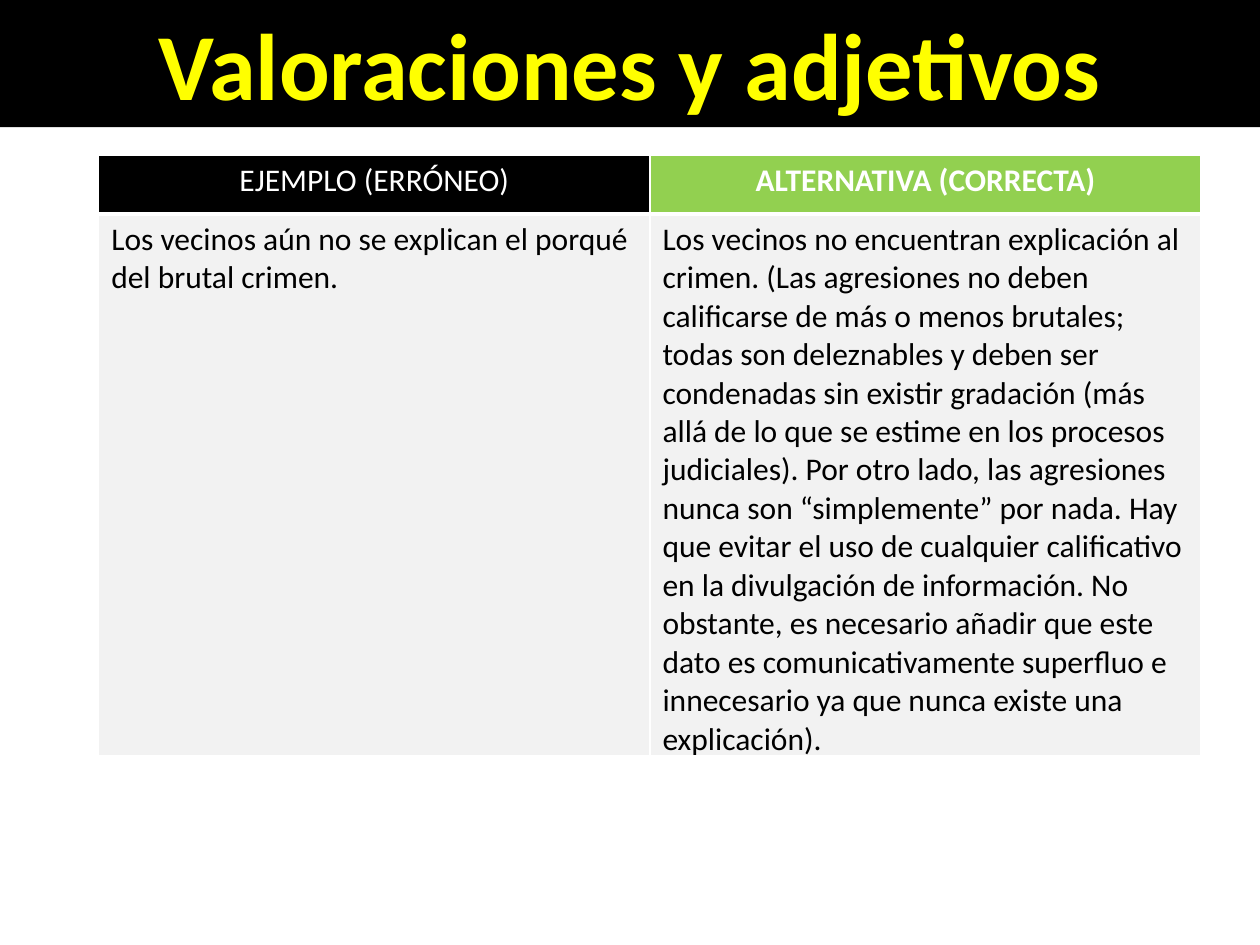
from lxml import etree
from pptx import Presentation
from pptx import util as u
from pptx.dml import color
from pptx.enum import shapes, text
from pptx.oxml import ns

COLORS = {"black": "000000", "white": "FFFFFF", "yellow": "FFFF00",
          "green": "92D050", "gray": "F2F2F2"}


def write_text(frame, wording, alignment, formats):
    paragraph = frame.paragraphs[0]
    paragraph.alignment = alignment
    run = paragraph.add_run()
    run.text = wording
    run.font.color.rgb = color.RGBColor.from_string(COLORS[formats["color"]])
    for name in ("name", "size", "bold"):
        setattr(run.font, name, formats[name])


def set_borders(cell, widths):
    properties = cell._tc.get_or_add_tcPr()
    for position, (side, width) in enumerate(widths.items()):
        line = etree.Element(ns.qn(f"a:ln{side}"), w=str(u.Pt(width)))
        fill = etree.SubElement(line, ns.qn("a:solidFill"))
        etree.SubElement(fill, ns.qn("a:srgbClr"), val=COLORS["white"])
        properties.insert(position, line)


presentation = Presentation()
presentation.slide_width, presentation.slide_height = u.Pt(720), u.Pt(540)
slide = presentation.slides.add_slide(presentation.slide_layouts[6])
center, left = text.PP_ALIGN.CENTER, text.PP_ALIGN.LEFT

# Title bar
bar = slide.shapes.add_shape(
    shapes.MSO_SHAPE.RECTANGLE, u.Pt(0), u.Pt(0), u.Pt(720), u.Pt(72.7))
bar.shadow.inherit = False
bar.fill.solid()
bar.fill.fore_color.rgb = color.RGBColor.from_string(COLORS["black"])
bar.line.fill.background()
bar.text_frame.word_wrap = True
bar.text_frame.auto_size = text.MSO_AUTO_SIZE.SHAPE_TO_FIT_TEXT
bar.text_frame.vertical_anchor = text.MSO_ANCHOR.TOP
write_text(bar.text_frame, "Valoraciones y adjetivos", center,
           {"name": "Calibri", "size": u.Pt(54), "bold": True, "color": "yellow"})

# Table of wrong and right wording: text, fill, font colour, bold
rows = [
    [("EJEMPLO (ERRÓNEO)", "black", "white", False),
     ("ALTERNATIVA (CORRECTA)", "green", "white", True)],
    [("Los vecinos aún no se explican el porqué del brutal crimen.",
      "gray", "black", False),
     ("Los vecinos no encuentran explicación al crimen. (Las agresiones no "
      "deben calificarse de más o menos brutales; todas son deleznables y "
      "deben ser condenadas sin existir gradación (más allá de lo que se "
      "estime en los procesos judiciales). Por otro lado, las agresiones "
      "nunca son “simplemente” por nada. Hay que evitar el uso de cualquier "
      "calificativo en la divulgación de información. No obstante, es "
      "necesario añadir que este dato es comunicativamente superfluo e "
      "innecesario ya que nunca existe una explicación).",
      "gray", "black", False)],
]
row_heights = [33.8, 309.6]
table = slide.shapes.add_table(
    2, 2, u.Pt(56.4), u.Pt(88.5), u.Pt(630), u.Pt(sum(row_heights))).table
for column in table.columns:
    column.width = u.Pt(315)

for row_index, (height, row) in enumerate(zip(row_heights, rows)):
    is_header = row_index == 0
    table.rows[row_index].height = u.Pt(height)
    for column_index, (wording, fill, font_color, bold) in enumerate(row):
        cell = table.cell(row_index, column_index)
        cell.fill.solid()
        cell.fill.fore_color.rgb = color.RGBColor.from_string(COLORS[fill])
        if not is_header:
            cell.margin_bottom = u.Pt(0)
        write_text(cell.text_frame, wording, center if is_header else left,
                   {"name": "Calibri", "size": u.Pt(18), "bold": bold,
                    "color": font_color})
        set_borders(cell, {"L": 1, "R": 1, "T": 1 if is_header else 3,
                           "B": 3 if is_header else 1})

presentation.save("out.pptx")
